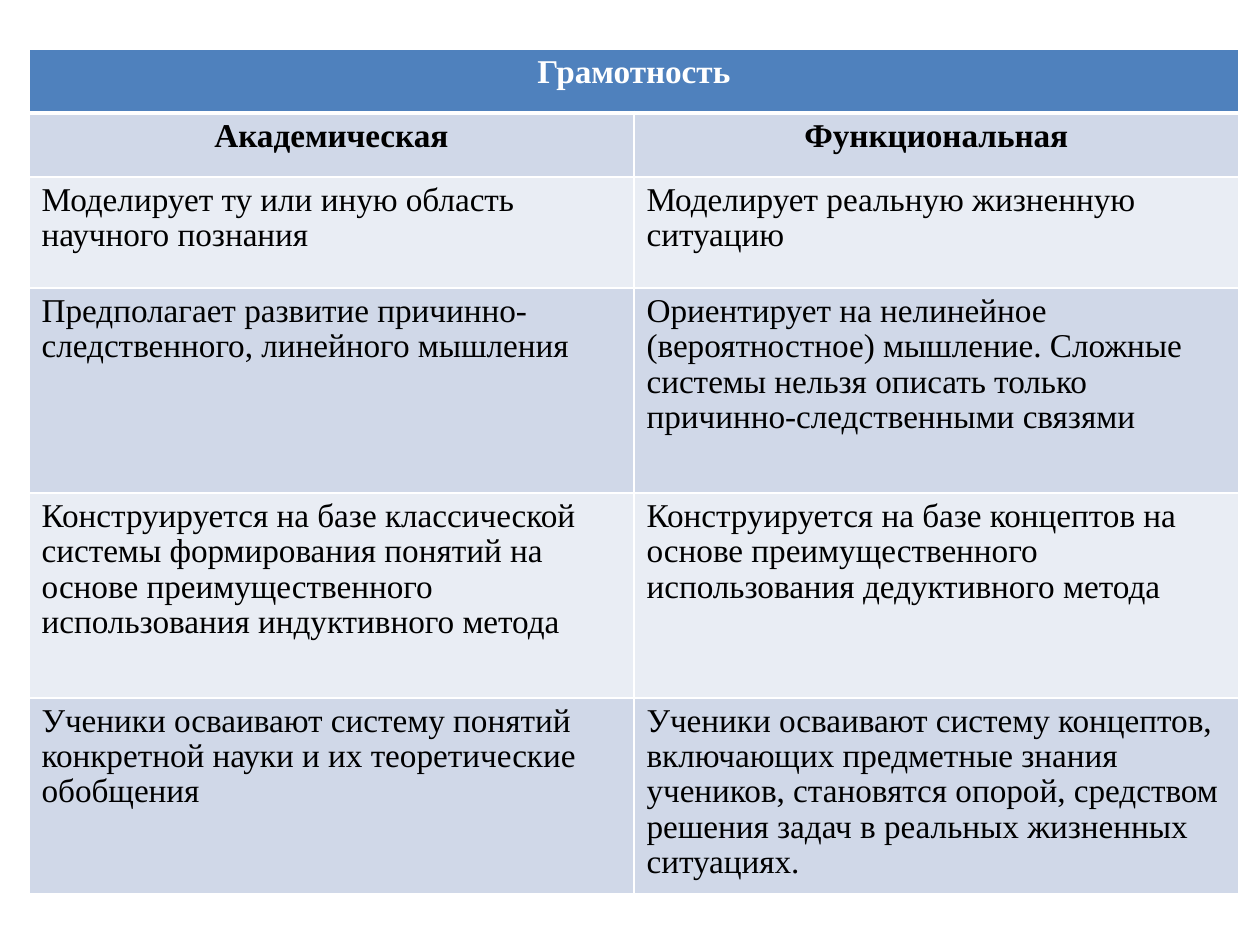
from dataclasses import dataclass

from lxml import etree
from pptx import Presentation
from pptx import util as u
from pptx.dml.color import RGBColor
from pptx.enum import text
from pptx.oxml.ns import qn

PX = 914400 // 126


@dataclass(frozen=True)
class Theme:
    font: str = "Times New Roman"
    size: int = 19
    line_spacing: float = 0.96
    header: str = "4F81BD"
    bands: tuple = ("D0D8E8", "E9EDF4")
    light: str = "FFFFFF"
    dark: str = "000000"
    rule: int = 1
    header_rule: int = 3


THEME = Theme()
LEFT, TOP, COL_WIDTH = 29, 49, 605
ROW_HEIGHTS = (64, 64, 111, 205, 205, 196)
ROWS = (
    ("Грамотность", ""),
    ("Академическая", "Функциональная"),
    ("Моделирует ту или иную область научного познания",
     "Моделирует реальную жизненную ситуацию"),
    ("Предполагает развитие причинно-следственного, линейного мышления",
     "Ориентирует на нелинейное (вероятностное) мышление. Сложные системы "
     "нельзя описать только причинно-следственными связями"),
    ("Конструируется на базе классической системы формирования понятий на "
     "основе преимущественного использования индуктивного метода",
     "Конструируется на базе концептов на основе преимущественного "
     "использования дедуктивного метода"),
    ("Ученики осваивают систему понятий конкретной науки и их теоретические "
     "обобщения",
     "Ученики осваивают систему концептов, включающих предметные знания "
     "учеников, становятся опорой, средством решения задач в реальных "
     "жизненных ситуациях."),
)


def px(n):
    return u.Emu(n * PX)


def set_borders(cell, widths):
    """Draw the cell's borders; widths maps L, R, T and B to points."""
    tc_pr = cell._tc.get_or_add_tcPr()
    for i, side in enumerate("LRTB"):
        ln = etree.Element(qn(f"a:ln{side}"), w=str(u.Pt(widths[side])))
        fill = etree.SubElement(ln, qn("a:solidFill"))
        etree.SubElement(fill, qn("a:srgbClr"), val=THEME.light)
        tc_pr.insert(i, ln)  # borders must precede the fill


def style_cell(cell, fill, color, heading):
    cell.fill.solid()
    cell.fill.fore_color.rgb = RGBColor.from_string(fill)
    for p in cell.text_frame.paragraphs:
        p.alignment = text.PP_ALIGN.CENTER if heading else text.PP_ALIGN.LEFT
        p.line_spacing = THEME.line_spacing
        p.font.name = THEME.font
        p.font.size = u.Pt(THEME.size)
        p.font.bold = heading
        p.font.color.rgb = RGBColor.from_string(color)


def add_literacy_table(s):
    table = s.shapes.add_table(
        len(ROWS), 2, px(LEFT), px(TOP), px(2 * COL_WIDTH), px(sum(ROW_HEIGHTS))
    ).table
    for col in table.columns:
        col.width = px(COL_WIDTH)
    for i, (height, row) in enumerate(zip(ROW_HEIGHTS, ROWS)):
        table.rows[i].height = px(height)
        fill = THEME.bands[(i - 1) % 2] if i else THEME.header
        color = THEME.dark if i else THEME.light
        widths = dict.fromkeys("LRTB", THEME.rule)
        if i == 0:
            widths["B"] = THEME.header_rule
        elif i == 1:
            widths["T"] = THEME.header_rule
        for j, words in enumerate(row):
            cell = table.cell(i, j)
            cell.text = words
            style_cell(cell, fill, color, heading=i < 2)
            set_borders(cell, widths)
    table.cell(0, 0).merge(table.cell(0, 1))


def main():
    prs = Presentation()
    prs.slide_width, prs.slide_height = u.Inches(10), u.Inches(7.5)
    s = prs.slides.add_slide(prs.slide_layouts[6])
    add_literacy_table(s)
    prs.save("out.pptx")


if __name__ == "__main__":
    main()
